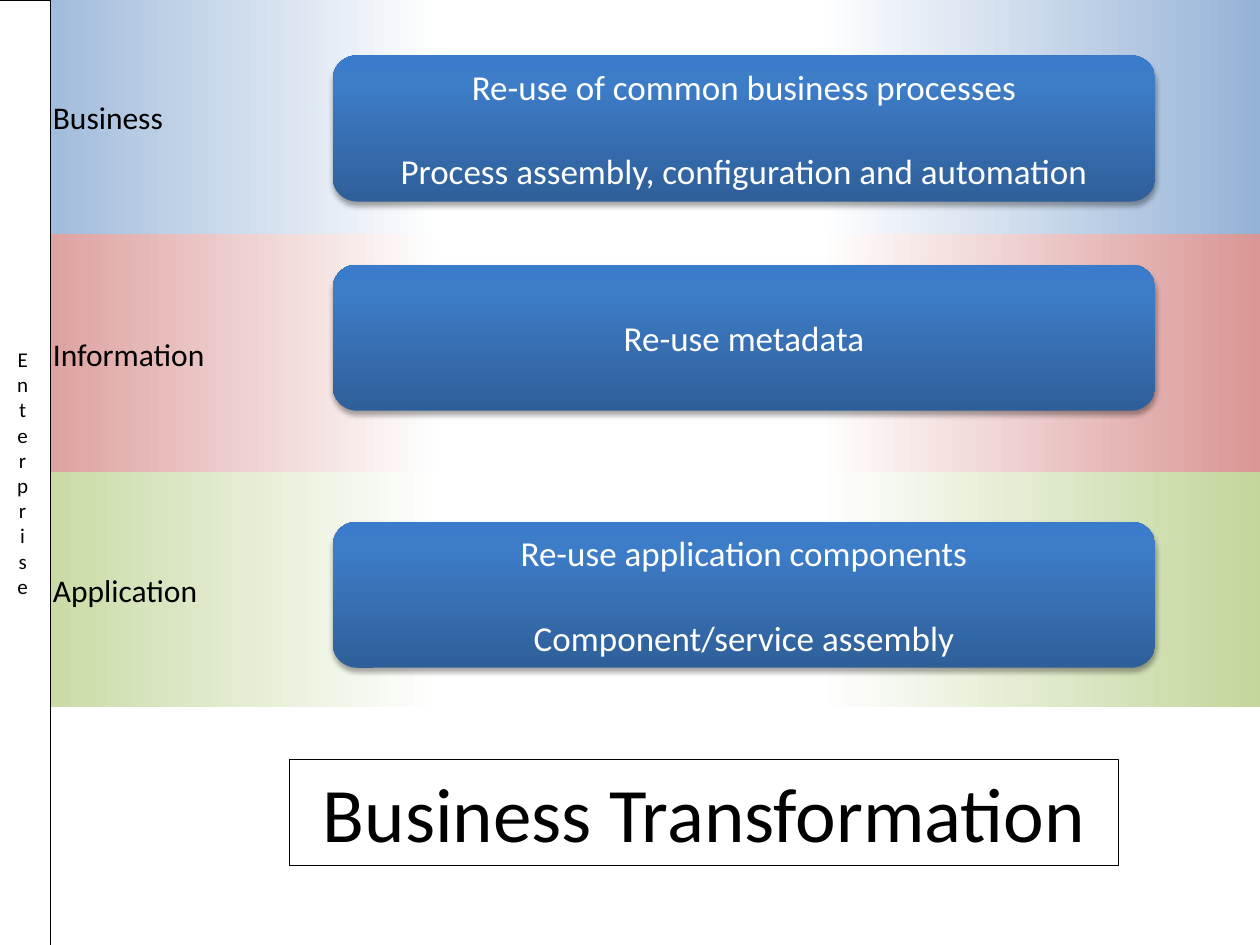
import dataclasses
import typing

import lxml.etree
import pptx
import pptx.dml.color
import pptx.enum.shapes
import pptx.enum.text
import pptx.oxml.ns
import pptx.util

Inches = pptx.util.Inches
Pt = pptx.util.Pt
Kind = pptx.enum.shapes.MSO_SHAPE
Align = pptx.enum.text.PP_ALIGN
Anchor = pptx.enum.text.MSO_ANCHOR
qn = pptx.oxml.ns.qn

Stops = list[tuple[int, str]]
CARD_FILL: Stops = [(0, "2F5F99"), (80, "3D7CC7"), (100, "3A7CCB")]


@dataclasses.dataclass
class Band:
    label: str
    top: float
    height: float
    tint: str


@dataclasses.dataclass
class Card:
    top: float
    lines: list[str]


@dataclasses.dataclass
class Panel:
    text: str
    box: tuple[float, float, float, float]
    size: int
    width: float
    frame: dict[str, typing.Any]


BANDS = [
    Band("Business", 0, 1.86, "95B3D7"),
    Band("Information", 1.86, 1.89, "D99694"),
    Band("Application", 3.75, 1.86, "C3D69B"),
]
CARDS = [
    Card(0.44, ["Re-use of common business processes",
                "Process assembly, configuration and automation"]),
    Card(2.1, ["Re-use metadata"]),
    Card(4.14, ["Re-use application components", "Component/service assembly"]),
]
PANELS = [
    Panel("Enterprise", (-0.04, 0, 0.44, 7.5), 12, 0.25,
          {"vertical_anchor": Anchor.MIDDLE}),
    Panel("Business Transformation", (2.3, 6.03, 6.58, 0.84), 44, 0.75,
          {"vertical_anchor": Anchor.TOP,
           "auto_size": pptx.enum.text.MSO_AUTO_SIZE.SHAPE_TO_FIT_TEXT}),
]


def color(code: str) -> pptx.dml.color.RGBColor:
    return pptx.dml.color.RGBColor.from_string(code)


def assign(target: typing.Any, values: dict[str, typing.Any]) -> None:
    for name, value in values.items():
        setattr(target, name, value)


def add_box(slide, kind, box: tuple[float, float, float, float]):
    shape = slide.shapes.add_shape(kind, *map(Inches, box))
    shape.shadow.inherit = False
    shape.line.fill.background()
    return shape


def shade(shape, stops: Stops, angle: int) -> None:
    shape.fill.gradient()
    shape.fill.gradient_angle = angle
    group = shape.element.spPr.find(".//" + qn("a:gsLst"))
    for old in list(group):
        group.remove(old)
    for place, code in stops:
        stop = lxml.etree.SubElement(group, qn("a:gs"), pos=str(place * 1000))
        lxml.etree.SubElement(stop, qn("a:srgbClr"), val=code)


def add_shadow(shape) -> None:
    effects = shape.element.spPr.find(qn("a:effectLst"))
    shadow = lxml.etree.SubElement(
        effects, qn("a:outerShdw"), blurRad=str(Pt(3.1)), dist=str(Pt(1.8)),
        dir="5400000", rotWithShape="0")
    tone = lxml.etree.SubElement(shadow, qn("a:srgbClr"), val="000000")
    lxml.etree.SubElement(tone, qn("a:alpha"), val="35000")


def write(shape, lines: list[str], size: int, code: str, align,
          frame: dict[str, typing.Any], gap: float = 0) -> None:
    text = shape.text_frame
    assign(text, {"word_wrap": True, "vertical_anchor": Anchor.MIDDLE} | frame)
    for index, line in enumerate(lines):
        para = text.add_paragraph() if index else text.paragraphs[0]
        para.alignment = align
        if index:
            para.space_before = Pt(gap)
        run = para.add_run()
        run.text = line
        assign(run.font, {"name": "Calibri", "size": Pt(size)})
        run.font.color.rgb = color(code)


def draw_band(slide, band: Band) -> None:
    shape = add_box(slide, Kind.RECTANGLE, (0, band.top, 10, band.height))
    shade(shape, [(0, band.tint), (35, "FFFFFF"), (65, "FFFFFF"), (100, band.tint)], 0)
    write(shape, [band.label], 18, "000000", Align.LEFT, {"margin_left": Inches(0.42)})


def draw_card(slide, card: Card) -> None:
    shape = add_box(slide, Kind.ROUNDED_RECTANGLE, (2.64, card.top, 6.53, 1.16))
    shade(shape, CARD_FILL, 90)
    add_shadow(shape)
    write(shape, card.lines, 20, "FFFFFF", Align.CENTER, {}, 24.4)


def draw_panel(slide, panel: Panel):
    shape = add_box(slide, Kind.RECTANGLE, panel.box)
    shape.fill.solid()
    shape.fill.fore_color.rgb = color("FFFFFF")
    shape.line.color.rgb = color("000000")
    shape.line.width = Pt(panel.width)
    write(shape, [panel.text], panel.size, "000000", Align.CENTER, panel.frame)
    return shape


def main() -> None:
    deck = pptx.Presentation()
    assign(deck, {"slide_width": Inches(10), "slide_height": Inches(7.5)})
    slide = deck.slides.add_slide(deck.slide_layouts[6])
    for band in BANDS:
        draw_band(slide, band)
    for card in CARDS:
        draw_card(slide, card)
    side, _ = [draw_panel(slide, panel) for panel in PANELS]
    side.text_frame._txBody.bodyPr.set("vert", "wordArtVert")
    deck.save("out.pptx")


if __name__ == "__main__":
    main()
